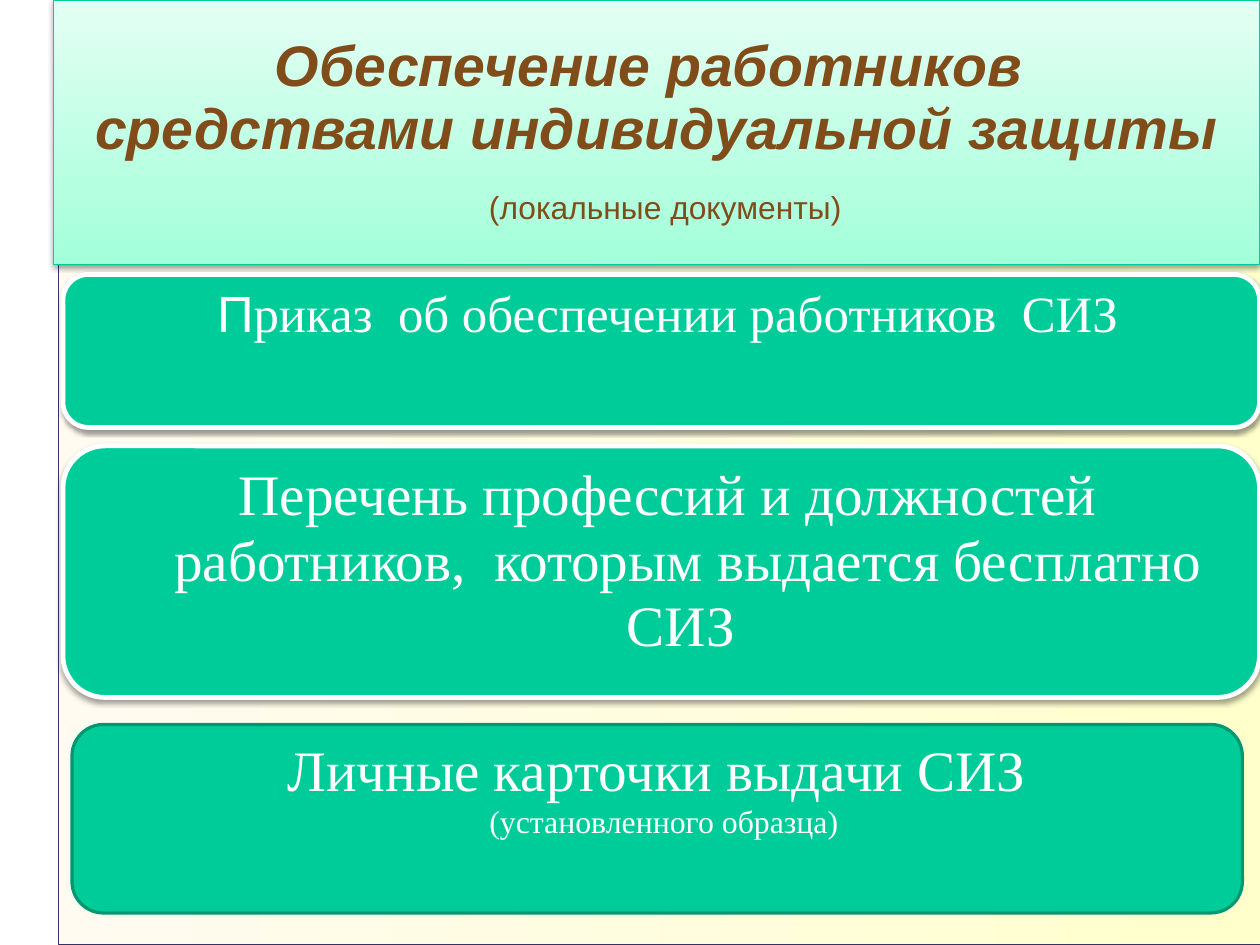
from dataclasses import dataclass
from typing import NamedTuple

from lxml.etree import SubElement
from pptx import Presentation
from pptx.dml.color import RGBColor
from pptx.dml.fill import FillFormat
from pptx.enum.shapes import MSO_SHAPE as ShapeKind
from pptx.enum.text import MSO_ANCHOR as Anchor, MSO_AUTO_SIZE as AutoSize, PP_ALIGN as Align
from pptx.oxml.ns import qn
from pptx.shapes.autoshape import Shape
from pptx.slide import Slide
from pptx.text.text import _Paragraph as Paragraph
from pptx.util import Cm, Pt


@dataclass(frozen=True)
class Theme:
    heading_font: str = "Arial"
    body_font: str = "Times New Roman"
    brown: str = "804C19"
    white: str = "FFFFFF"
    green: str = "00CC99"
    dark_green: str = "009771"
    navy: str = "333366"
    black: str = "000000"
    title_gradient: tuple[str, str] = ("E4FFF4", "A3FFD9")
    panel_gradient: tuple[str, str] = ("FFFBF0", "FFFFCC")
    spacer_size: int = 40
    large: int = 36
    medium: int = 32
    small: int = 20


THEME = Theme()


class Piece(NamedTuple):
    text: str
    size: int
    font: str = THEME.body_font
    color: str = THEME.white
    emphasis: bool = False


class Card(NamedTuple):
    left: float
    top: float
    width: float
    height: float
    paragraphs: list[list[Piece]]
    line_color: str = THEME.white
    line_width: float = 3
    shadow: bool = True
    spacing: float = 0.95


TITLE = [
    Piece("Обеспечение работников \vсредствами индивидуальной защиты\v",
          THEME.large, THEME.heading_font, THEME.brown, True),
    Piece(" ", THEME.spacer_size, THEME.heading_font, THEME.brown),
    Piece("(локальные документы)", THEME.small, THEME.heading_font, THEME.brown),
]
CARDS = [
    Card(1.4, 6.1, 26.59, 3.4, [[
        Piece("П", THEME.medium, THEME.heading_font),
        Piece("риказ  об обеспечении работников  СИЗ", THEME.medium),
    ]], spacing=0.93),
    Card(1.4, 9.91, 26.59, 5.59, [[
        Piece("Перечень профессий и должностей работников,  "
              "которым выдается бесплатно СИЗ ", THEME.large),
    ]]),
    Card(1.6, 16.1, 26.01, 4.19, [
        [Piece("Личные карточки выдачи СИЗ ", THEME.large)],
        [Piece("(установленного образца)", THEME.small)],
    ], THEME.dark_green, 2, shadow=False),
]


def rgb(color: str) -> RGBColor:
    return RGBColor.from_string(color)


def set_gradient(fill: FillFormat, colors: tuple[str, str], angle: float) -> None:
    fill.gradient()
    fill.gradient_angle = angle
    for stop, color, position in zip(fill.gradient_stops, colors, (0, 1)):
        stop.color.rgb = rgb(color)
        stop.position = position


def set_line(shape: Shape, color: str, width: float) -> None:
    shape.line.color.rgb = rgb(color)
    shape.line.width = Pt(width)


def add_shadow(shape: Shape) -> None:
    """Cast a soft shadow straight down."""
    shape.shadow.inherit = False
    effects = shape.element.spPr.find(qn("a:effectLst"))
    outer = SubElement(effects, qn("a:outerShdw"), blurRad=str(Pt(3.1)),
                       dist=str(Pt(1.6)), dir="5400000", rotWithShape="0")
    color = SubElement(outer, qn("a:srgbClr"), val=THEME.black)
    SubElement(color, qn("a:alpha"), val="38000")


def write_paragraph(paragraph: Paragraph, pieces: list[Piece], spacing: float) -> None:
    paragraph.alignment = Align.CENTER
    paragraph.line_spacing = spacing
    for piece in pieces:
        done = len(paragraph.runs)
        if done:
            paragraph.add_run().text = piece.text
        else:
            paragraph.text = piece.text
        for run in paragraph.runs[done:]:
            run.font.name = piece.font
            run.font.size = Pt(piece.size)
            run.font.bold = run.font.italic = piece.emphasis
            run.font.color.rgb = rgb(piece.color)


def format_title(title: Shape) -> None:
    title.left, title.top, title.width, title.height = Cm(1.19), Cm(0), Cm(26.8), Cm(5.87)
    set_gradient(title.fill, THEME.title_gradient, 270)
    set_line(title, THEME.green, 0.75)
    add_shadow(title)
    frame = title.text_frame
    frame.word_wrap = True
    frame.auto_size = AutoSize.NONE
    frame.vertical_anchor = Anchor.MIDDLE
    frame.margin_left = frame.margin_right = frame.margin_bottom = 0
    frame.margin_top = Cm(0.1)
    write_paragraph(frame.paragraphs[0], TITLE, 0.93)
    for line_break in title.element.iter(qn("a:br")):
        SubElement(line_break, qn("a:rPr"), sz=str(THEME.large * 100))


def add_panel(slide: Slide) -> None:
    """Add the pale panel behind the title."""
    panel = slide.shapes.add_shape(ShapeKind.RECTANGLE, Cm(1.3), Cm(0), Cm(26.72), Cm(21))
    panel.shadow.inherit = False
    set_gradient(panel.fill, THEME.panel_gradient, 0)
    set_line(panel, THEME.navy, 0.75)
    slide.shapes.title.element.addprevious(panel.element)


def add_card(slide: Slide, card: Card) -> None:
    shape = slide.shapes.add_shape(ShapeKind.ROUNDED_RECTANGLE, Cm(card.left), Cm(card.top),
                                   Cm(card.width), Cm(card.height))
    shape.shadow.inherit = False
    shape.fill.solid()
    shape.fill.fore_color.rgb = rgb(THEME.green)
    set_line(shape, card.line_color, card.line_width)
    if card.shadow:
        add_shadow(shape)
    frame = shape.text_frame
    frame.word_wrap = True
    frame.vertical_anchor = Anchor.TOP
    for index, pieces in enumerate(card.paragraphs):
        paragraph = frame.add_paragraph() if index else frame.paragraphs[0]
        write_paragraph(paragraph, pieces, card.spacing)
    for properties in shape.element.iter(qn("a:pPr")):
        properties.set("marL", str(Cm(1.19)))
        properties.set("indent", str(Cm(-0.89)))


def main() -> None:
    presentation = Presentation()
    presentation.slide_width, presentation.slide_height = Cm(28), Cm(21)
    title_only = presentation.slide_layouts.get_by_name("Title Only")
    slide = presentation.slides.add_slide(title_only)
    format_title(slide.shapes.title)
    add_panel(slide)
    for card in CARDS:
        add_card(slide, card)
    presentation.save("out.pptx")


if __name__ == "__main__":
    main()
